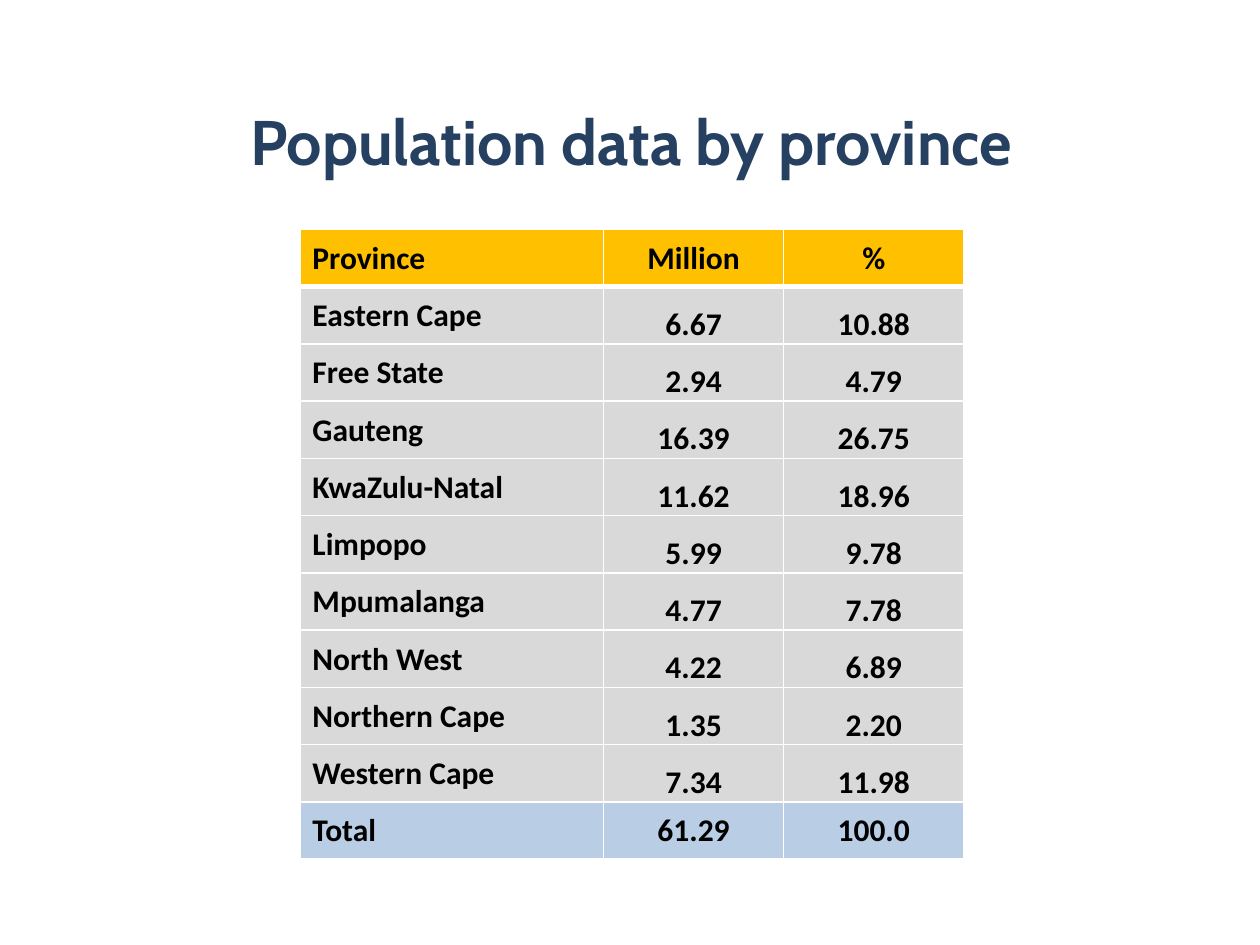
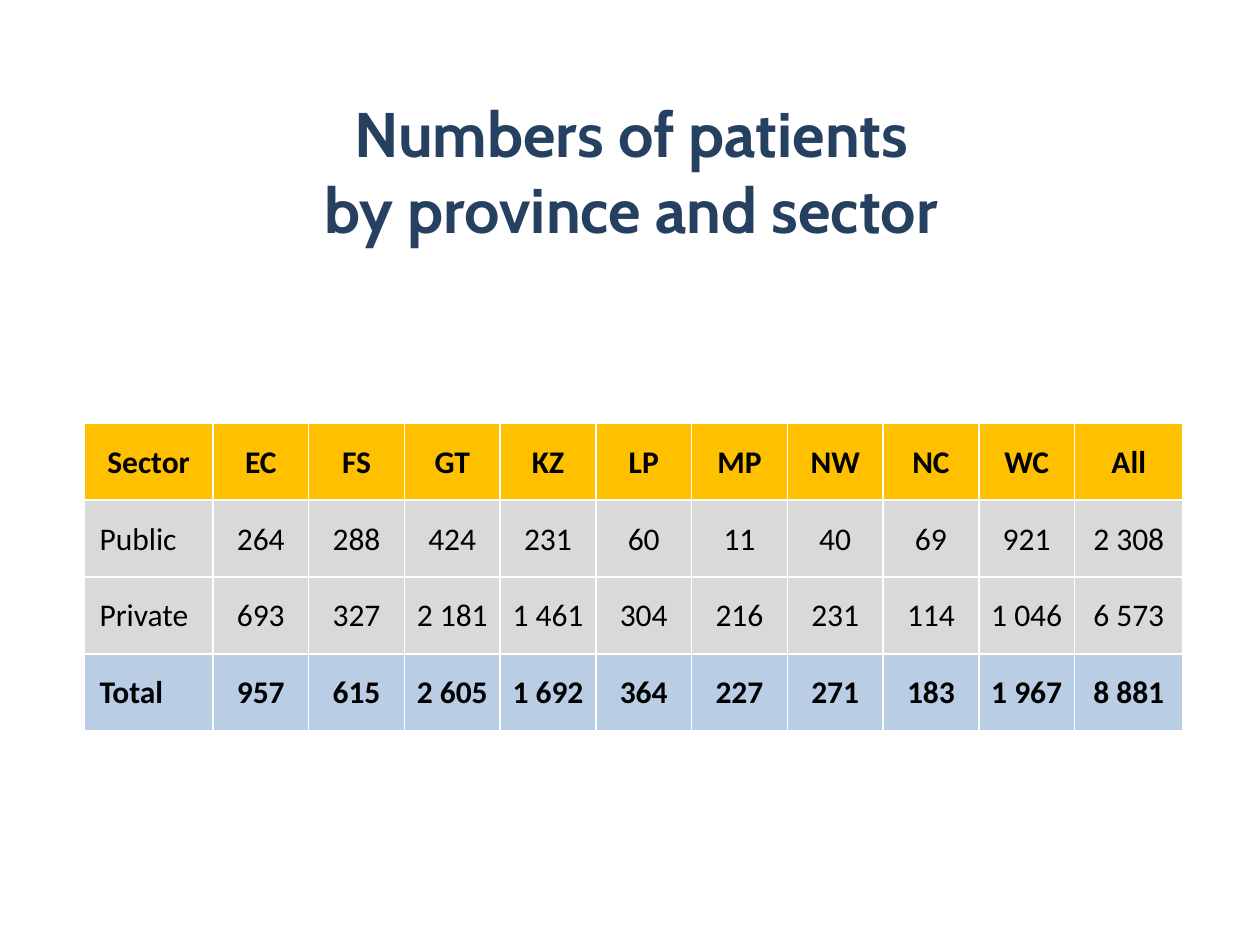
from lxml import etree
from pptx import Presentation
from pptx.dml.color import RGBColor
from pptx.enum.text import MSO_ANCHOR, PP_ALIGN
from pptx.oxml.ns import qn
from pptx.util import Inches, Pt

NAVY = RGBColor(0x25, 0x40, 0x61)
BLACK = RGBColor(0x00, 0x00, 0x00)
WHITE = RGBColor(0xFF, 0xFF, 0xFF)
AMBER = RGBColor(0xFF, 0xC0, 0x00)
GREY = RGBColor(0xD9, 0xD9, 0xD9)
PALE_BLUE = RGBColor(0xB9, 0xCD, 0xE5)
CENTER, LEFT = PP_ALIGN.CENTER, PP_ALIGN.LEFT
MIDDLE, BOTTOM = MSO_ANCHOR.MIDDLE, MSO_ANCHOR.BOTTOM
TITLE_FONT, TABLE_FONT = "Cabin", "Calibri"


def format_text(text_frame, alignment, font_name, size, color, bold):
    for para in text_frame.paragraphs:
        para.alignment = alignment
        for span in para.runs:
            span.font.name = font_name
            span.font.size = Pt(size)
            span.font.color.rgb = color
            span.font.bold = bold


def set_border(cell, side, points):
    line = etree.SubElement(cell._tc.get_or_add_tcPr(), qn("a:" + side), w=str(Pt(points)))
    fill = etree.SubElement(line, qn("a:solidFill"))
    etree.SubElement(fill, qn("a:srgbClr"), val=str(WHITE))


PROVINCE_ROWS = [
    ["Province", "Million", "%"],
    ["Eastern Cape", "6.67", "10.88"],
    ["Free State", "2.94", "4.79"],
    ["Gauteng", "16.39", "26.75"],
    ["KwaZulu-Natal", "11.62", "18.96"],
    ["Limpopo", "5.99", "9.78"],
    ["Mpumalanga", "4.77", "7.78"],
    ["North West", "4.22", "6.89"],
    ["Northern Cape", "1.35", "2.20"],
    ["Western Cape", "7.34", "11.98"],
    ["Total", "61.29", "100.0"],
]
SECTOR_ROWS = [
    ["Sector", "EC", "FS", "GT", "KZ", "LP", "MP", "NW", "NC", "WC", "All"],
    ["Public", "264", "288", "424", "231", "60", "11", "40", "69", "921", "2 308"],
    ["Private", "693", "327", "2 181", "1 461", "304", "216", "231", "114", "1 046", "6 573"],
    ["Total", "957", "615", "2 605", "1 692", "364", "227", "271", "183", "1 967", "8 881"],
]
PAGES = [
    dict(title="Population data by province", title_top=0.68, title_height=0.87,
         rows=PROVINCE_ROWS, left=2.38, top=1.82, height=5,
         widths=[2.41, 1.43, 1.43], header_line=3, header_align=LEFT,
         body_bold=True, value_anchor=BOTTOM, label_inset=0.1),
    dict(title="Numbers of patients\vby province and sector", title_top=0.84, title_height=1.02,
         rows=SECTOR_ROWS, left=0.67, top=3.36, height=2.44,
         widths=[1.02] + [0.76] * 9 + [0.86], header_line=1, header_align=CENTER,
         body_bold=False, value_anchor=MIDDLE, label_inset=0.12),
]

deck = Presentation()
deck.slide_width, deck.slide_height = Inches(10), Inches(7.5)

for content in PAGES:
    page = deck.slides.add_slide(deck.slide_layouts[6])
    box = page.shapes.add_textbox(Inches(0.51), Inches(content["title_top"]),
                                  Inches(9), Inches(content["title_height"]))
    box.text_frame.word_wrap = True
    box.text_frame.vertical_anchor = MIDDLE
    box.text_frame.text = content["title"]
    format_text(box.text_frame, CENTER, TITLE_FONT, 36, NAVY, True)

    rows, widths = content["rows"], content["widths"]
    table = page.shapes.add_table(len(rows), len(widths), Inches(content["left"]),
                                  Inches(content["top"]), Inches(sum(widths)),
                                  Inches(content["height"])).table
    for column, width in zip(table.columns, widths):
        column.width = Inches(width)

    for row_index, values in enumerate(rows):
        is_header = row_index == 0
        is_total = row_index == len(rows) - 1
        for column_index, value in enumerate(values):
            is_label = column_index == 0
            cell = table.cell(row_index, column_index)
            for side in ("lnL", "lnR", "lnT", "lnB"):
                under_header = (row_index, side) in ((0, "lnB"), (1, "lnT"))
                set_border(cell, side, content["header_line"] if under_header else 1)
            cell.fill.solid()
            cell.fill.fore_color.rgb = AMBER if is_header else PALE_BLUE if is_total else GREY

            alignment = CENTER
            if is_label:
                alignment = content["header_align"] if is_header else LEFT
            inset = content["label_inset"] if alignment == LEFT else 0.01
            cell.margin_left, cell.margin_right = Inches(inset), Inches(0.01)
            cell.margin_top, cell.margin_bottom = Inches(0.01), 0
            is_value = not (is_header or is_total or is_label)
            cell.vertical_anchor = content["value_anchor"] if is_value else MIDDLE
            cell.text_frame.text = value
            bold = is_header or is_total or content["body_bold"]
            format_text(cell.text_frame, alignment, TABLE_FONT, 18, BLACK, bold)

deck.save("out.pptx")
